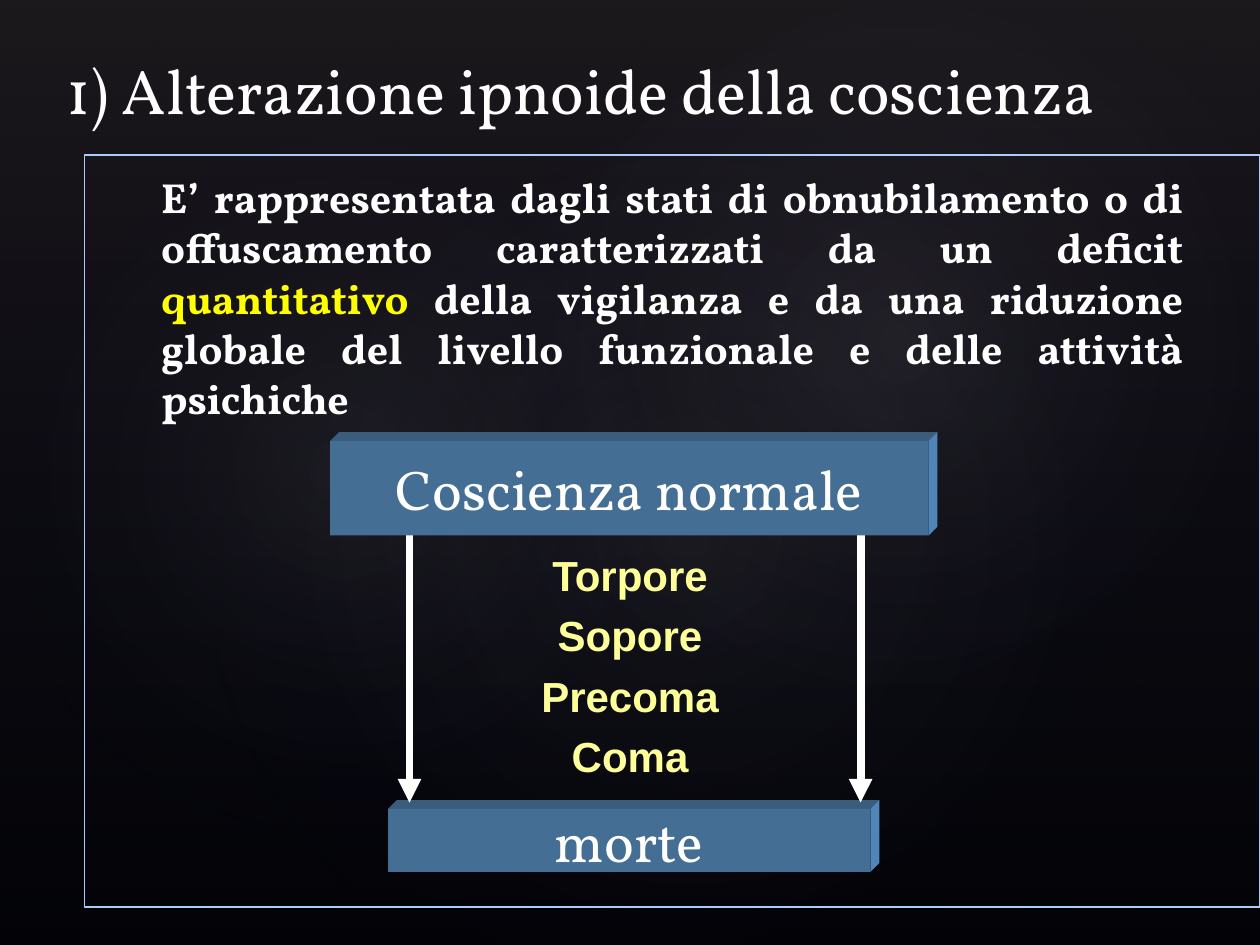
from lxml import etree
from pptx import Presentation
from pptx import util as u
from pptx.dml.color import RGBColor
from pptx.enum import shapes, text
from pptx.oxml import parse_xml
from pptx.oxml.ns import qn

COLORS = {
    "black": "000000", "white": "FFFFFF", "yellow": "FFFF00", "cream": "FFFF99",
    "frame": "ACCBF9", "front": "446E94", "top": "3A5D7D", "side": "5185B9",
    "dusk": "504652", "glow": "C4BCC6", "navy": "242852",
}
NS = "http://schemas.openxmlformats.org/drawingml/2006/main"
SERIF, SANS = "Vollkorn", "Arial"
DEPTH = 0.07


def rgb(name):
    return RGBColor.from_string(COLORS[name])


class Deck:
    """Holds the style and the current slide, with a method for each kind of element."""

    def __init__(self, prs):
        self.s = prs.slides.add_slide(prs.slide_layouts[6])
        fill = self.s.background.fill
        fill.solid()
        fill.fore_color.rgb = rgb("black")

    def shape(self, kind, box, fill=None, line=None):
        sp = self.s.shapes.add_shape(kind, *map(u.Inches, box))
        self.paint(sp, fill, line)
        return sp

    def paint(self, sp, fill=None, line=None):
        sp.shadow.inherit = False
        if fill:
            sp.fill.solid()
            sp.fill.fore_color.rgb = rgb(fill)
        else:
            sp.fill.background()
        if line:
            sp.line.color.rgb = rgb(line)
            sp.line.width = u.Pt(0.75)
        else:
            sp.line.fill.background()

    def gradient(self, kind, box, stops, direction, rotation=0):
        sp = self.shape(kind, box)
        sp.rotation = rotation
        marks = "".join(
            f'<a:gs pos="{pos * 1000}"><a:srgbClr val="{COLORS[color]}">'
            f'<a:alpha val="{alpha * 1000}"/></a:srgbClr></a:gs>'
            for pos, color, alpha in stops)
        grad = parse_xml(f'<a:gradFill xmlns:a="{NS}" rotWithShape="1">'
                         f'<a:gsLst>{marks}</a:gsLst>{direction}</a:gradFill>')
        props = sp._element.spPr
        props.replace(props.find(qn("a:noFill")), grad)

    def glow(self, box, rotation, alpha):
        centre = ('<a:path path="circle"><a:fillToRect l="50000" t="50000" '
                  'r="50000" b="50000"/></a:path>')
        stops = [(0, "glow", alpha), (58, "navy", 0), (100, "navy", 0)]
        self.gradient(shapes.MSO_SHAPE.OVAL, box, stops, centre, rotation)

    def label(self, sp, paragraphs, size, font=SERIF, color="white", bold=False,
              align=text.PP_ALIGN.LEFT, before=0, wrap=True):
        tf = sp.text_frame
        tf.word_wrap = wrap
        for i, runs in enumerate(paragraphs):
            p = tf.paragraphs[0] if i == 0 else tf.add_paragraph()
            p.alignment, p.space_before = align, u.Pt(before)
            p.font.size, p.font.name, p.font.bold = u.Pt(size), font, bold
            p.font.color.rgb = rgb(color)
            for words, tint in runs:
                r = p.add_run()
                r.text = words
                if tint:
                    r.font.color.rgb = rgb(tint)
        return tf

    def textbox(self, box, paragraphs, size, **style):
        sp = self.s.shapes.add_textbox(*map(u.Inches, box))
        self.label(sp, paragraphs, size, **style)

    def face(self, points, fill):
        start, *rest = [(u.Inches(x), u.Inches(y)) for x, y in points]
        builder = self.s.shapes.build_freeform(*start)
        builder.add_line_segments(rest)
        self.paint(builder.convert_to_shape(), fill)

    def block(self, box, words):
        x, y, w, h = box
        r, b, d = x + w, y + h, DEPTH
        self.face([(x, y), (x + d, y - d), (r + d, y - d), (r, y)], "top")
        self.face([(r, y), (r + d, y - d), (r + d, b - d), (r, b)], "side")
        sp = self.shape(shapes.MSO_SHAPE.RECTANGLE, box, "front")
        tf = self.label(sp, [[(words, None)]], 32,
                        align=text.PP_ALIGN.CENTER, wrap=False)
        tf.vertical_anchor = text.MSO_ANCHOR.MIDDLE

    def arrow(self, x, top, bottom):
        c = self.s.shapes.add_connector(
            shapes.MSO_CONNECTOR.STRAIGHT, *map(u.Inches, (x, top, x, bottom)))
        c.line.color.rgb = rgb("white")
        c.line.width = u.Pt(4.5)
        props = c._element.spPr
        etree.SubElement(props.find(qn("a:ln")), qn("a:tailEnd"), type="triangle")
        etree.SubElement(props, qn("a:effectLst"))


def main():
    prs = Presentation()
    prs.slide_width, prs.slide_height = u.Inches(10), u.Inches(7.5)
    deck = Deck(prs)

    deck.gradient(shapes.MSO_SHAPE.RECTANGLE, (0, 0, 10, 7.5),
                  [(0, "dusk", 36), (100, "navy", 10)],
                  '<a:lin ang="5400000" scaled="0"/>')
    for box, rotation, alpha in [((1.5, 1.14, 7.92, 6.24), 328.7, 7),
                                 ((-0.3, 1.28, 6.06, 4.9), 294.3, 8),
                                 ((3.58, 0.13, 7.09, 5.2), 328.7, 8)]:
        deck.glow(box, rotation, alpha)

    deck.block((3.08, 6.42, 3.83, 0.5), "morte")
    stages = ["Torpore", "Sopore", "Precoma", "Coma"]
    deck.textbox((4.19, 4.31, 1.62, 1.96), [[(stage, None)] for stage in stages],
                 24, font=SANS, color="cream", bold=True,
                 align=text.PP_ALIGN.CENTER, before=5.8, wrap=False)
    for x in (3.25, 6.83):
        deck.arrow(x, 4.12, 6.37)

    body = deck.shape(shapes.MSO_SHAPE.RECTANGLE, (0.67, 1.23, 9.33, 5.97), line="frame")
    tf = deck.label(body, [[
        ("E’ rappresentata dagli stati di obnubilamento o di offuscamento "
         "caratterizzati da un deficit ", None),
        ("quantitativo", "yellow"),
        (" della vigilanza e da una riduzione globale del livello funzionale "
         "e delle attività psichiche", None),
    ]], 24, bold=True, align=text.PP_ALIGN.JUSTIFY, before=5.8)
    tf.vertical_anchor = text.MSO_ANCHOR.TOP
    tf.margin_left = tf.margin_right = u.Inches(0.61)
    tf.margin_top, tf.margin_bottom = u.Inches(0.13), u.Inches(0.05)

    deck.block((2.62, 3.5, 4.75, 0.75), "Coscienza normale")
    deck.textbox((0.43, 0.36, 9.29, 0.71),
                 [[("1) Alterazione ipnoide della coscienza", None)]], 36)
    prs.save("out.pptx")


if __name__ == "__main__":
    main()
